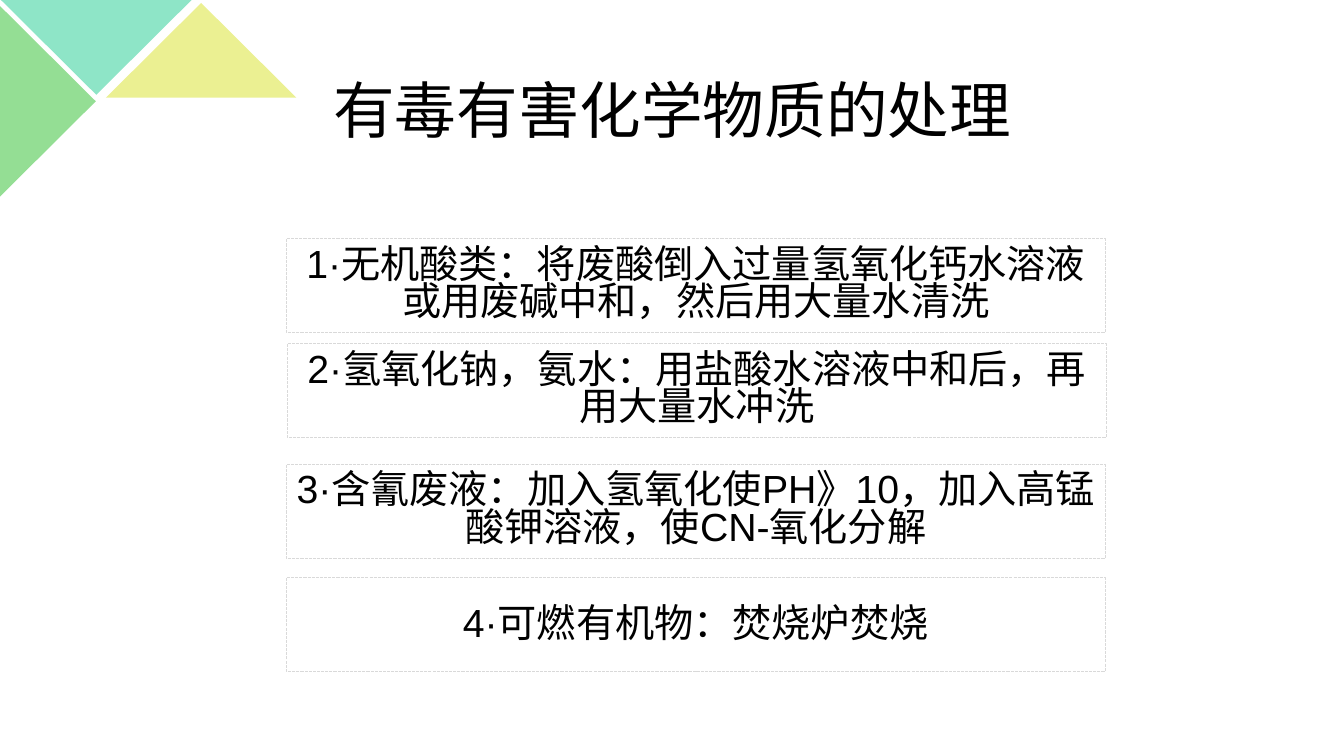
from pptx import Presentation
from pptx.dml.color import RGBColor
from pptx.enum.dml import MSO_LINE
from pptx.enum.shapes import MSO_SHAPE
from pptx.enum.text import MSO_ANCHOR, PP_ALIGN
from pptx.util import Inches, Pt

TRIANGLE, RECTANGLE = MSO_SHAPE.ISOSCELES_TRIANGLE, MSO_SHAPE.RECTANGLE
DASH = MSO_LINE.SQUARE_DOT  # written to the file as sysDot
SYS_DASH = MSO_LINE.DASH
MIDDLE, CENTER = MSO_ANCHOR.MIDDLE, PP_ALIGN.CENTER
GREEN = RGBColor(0x94, 0xDE, 0x94)
TEAL = RGBColor(0x8E, 0xE5, 0xC7)
YELLOW = RGBColor(0xEB, 0xF0, 0x92)
GREY = RGBColor(0xD9, 0xD9, 0xD9)
BLACK = RGBColor(0, 0, 0)


def add_centred_text(sp, text, size, line_spacing, space_before=0):
    tf = sp.text_frame
    tf.word_wrap = True
    tf.vertical_anchor = MIDDLE
    p = tf.paragraphs[0]
    p.alignment = CENTER
    p.line_spacing = line_spacing
    p.space_before = Pt(space_before)
    r = p.add_run()
    r.text = text
    r.font.name = "Arial"
    r.font.size = Pt(size)
    r.font.color.rgb = BLACK


prs = Presentation()
prs.slide_width, prs.slide_height = Inches(13.33), Inches(7.5)
s = prs.slides.add_slide(prs.slide_layouts[6])

# Corner triangles: left, top, height, rotation, colour
corner_triangles = [
    (-0.47, 0.53, 0.95, 90, GREEN),
    (0.01, 0, 0.94, 180, TEAL),
    (1.05, 0.03, 0.94, 0, YELLOW),
]
for left, top, height, rotation, colour in corner_triangles:
    sp = s.shapes.add_shape(TRIANGLE, Inches(left), Inches(top), Inches(1.89), Inches(height))
    sp.rotation = rotation
    sp.shadow.inherit = False
    sp.fill.solid()
    sp.fill.fore_color.rgb = colour
    sp.line.fill.background()

title = s.shapes.add_textbox(Inches(0.92), Inches(0.4), Inches(11.5), Inches(1.45))
add_centred_text(title, "有毒有害化学物质的处理", 44, 0.9)

# Treatment boxes: left, top, line spacing, text
treatments = [
    (2.84, 2.37, 0.8, "1·无机酸类：将废酸倒入过量氢氧化钙水溶液或用废碱中和，然后用大量水清洗"),
    (2.85, 3.41, 0.8, "2·氢氧化钠，氨水：用盐酸水溶液中和后，再用大量水冲洗"),
    (2.84, 4.61, 0.8, "3·含氰废液：加入氢氧化使PH》10，加入高锰酸钾溶液，使CN-氧化分解"),
    (2.84, 5.73, 0.9, "4·可燃有机物：焚烧炉焚烧"),
]
for left, top, line_spacing, text in treatments:
    sp = s.shapes.add_shape(RECTANGLE, Inches(left), Inches(top), Inches(8.12), Inches(0.93))
    sp.shadow.inherit = False
    sp.fill.background()
    sp.line.color.rgb = GREY
    sp.line.width = Pt(0.75)
    sp.line.dash_style = DASH
    sp.line._ln.prstDash.set("val", "sysDash")
    add_centred_text(sp, text, 28, line_spacing, space_before=10)

prs.save("out.pptx")
